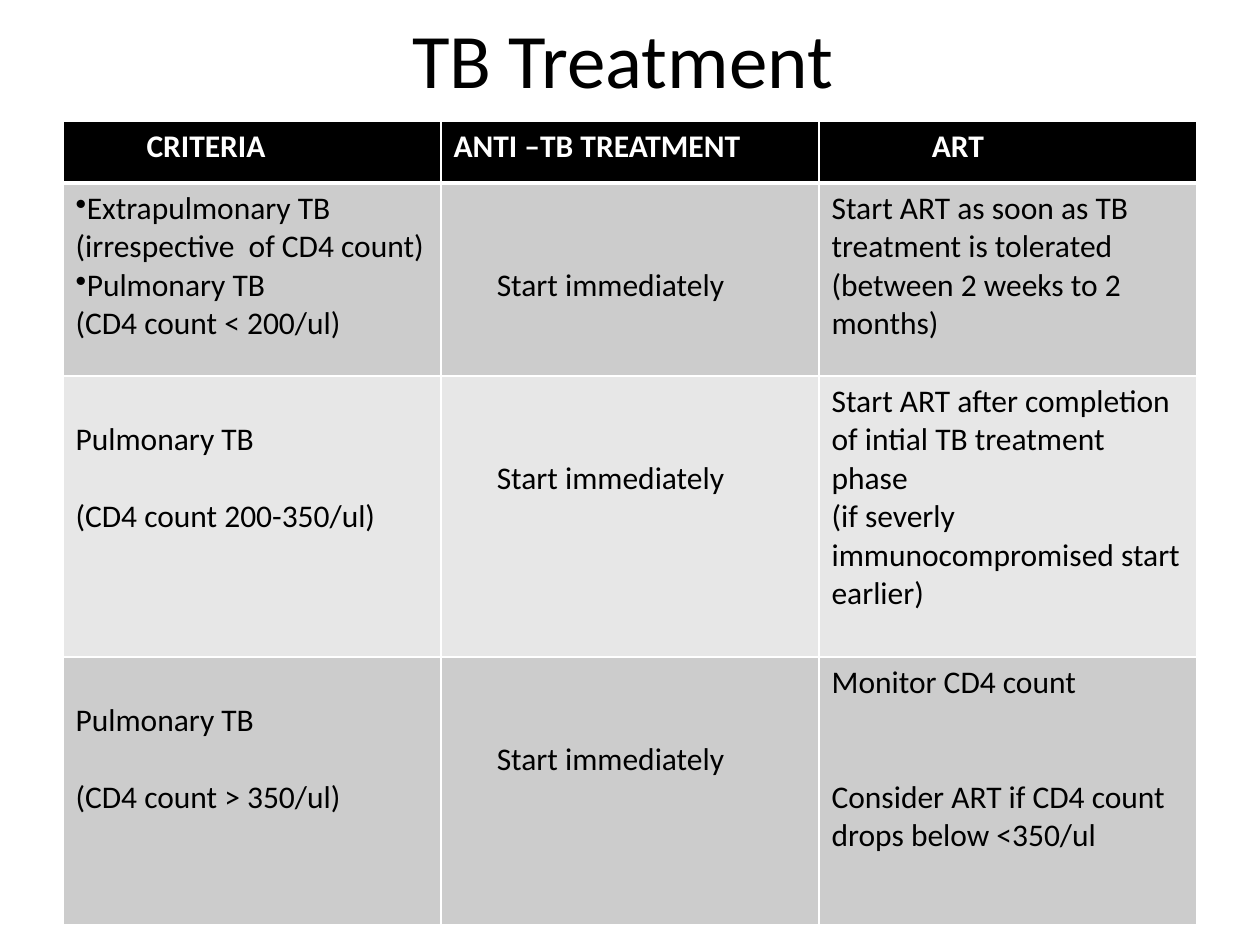
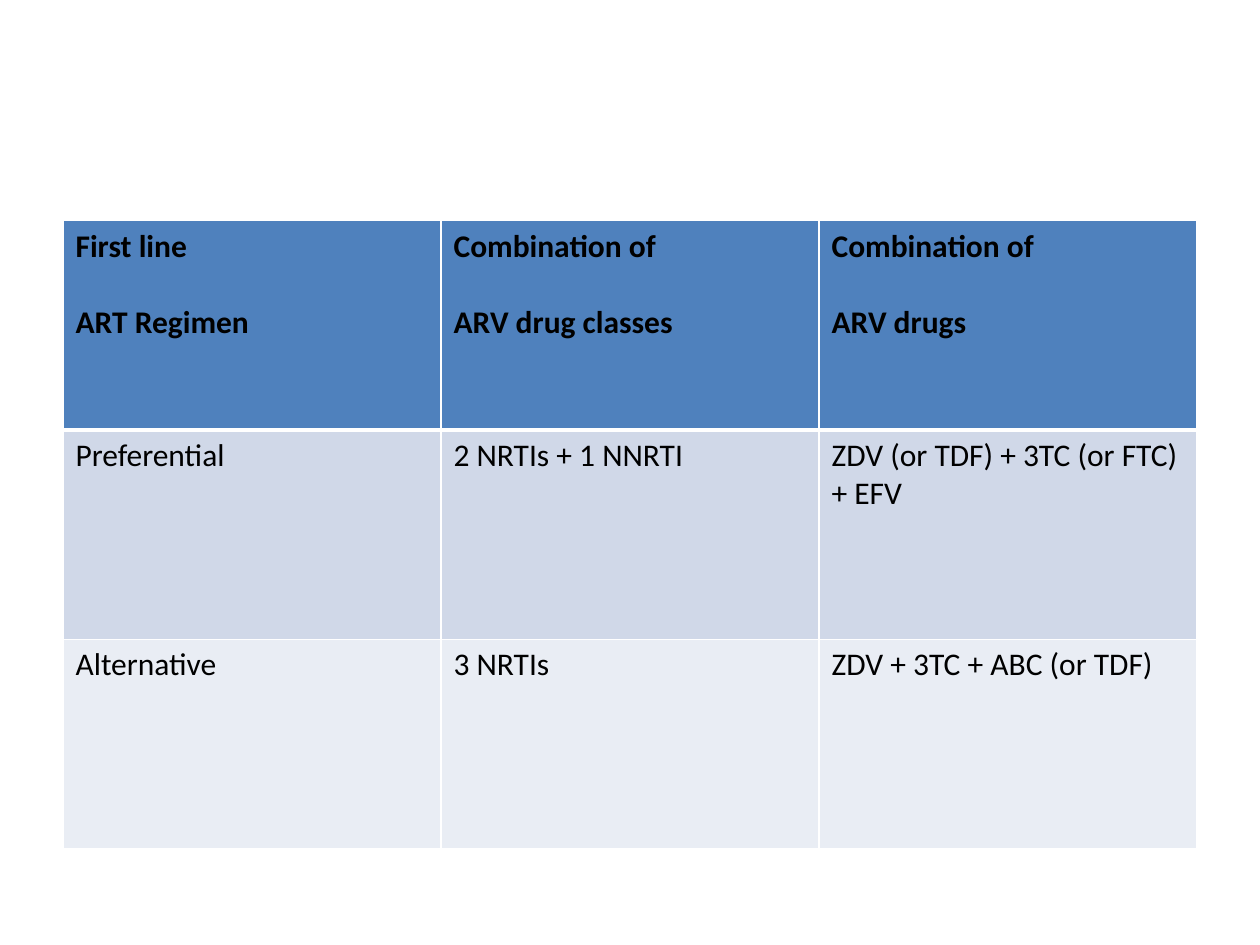
"""Build two slides with tables on tuberculosis treatment and first line ART regimens."""
import dataclasses

import lxml.etree
import pptx
import pptx.dml.color
import pptx.enum.text
import pptx.oxml.ns
import pptx.util

Cm = pptx.util.Cm
Pt = pptx.util.Pt


@dataclasses.dataclass(frozen=True)
class Theme:
    """Colours, font and type sizes shared by the slides."""
    font: str = "Calibri"
    title_size: int = 44
    cell_size: int = 18
    line_height: int = 22
    ink: str = "000000"
    paper: str = "FFFFFF"
    grey_bands: tuple = ("CCCCCC", "E7E7E7")
    blue: str = "4F81BD"
    blue_bands: tuple = ("D0D8E8", "E9EDF4")
    rule: int = 1
    header_rule: int = 3


@dataclasses.dataclass(frozen=True)
class Line:
    """One paragraph: its text, empty lines above, left indent in cm and bullet."""
    text: str
    gap: int = 0
    indent: float = 0
    bullet: bool = False


THEME = Theme()
START = [Line("Start immediately", gap=2, indent=0.87)]

TREATMENT = {
    "title": "TB Treatment ",
    "top": 2.45,
    "row_heights": (1.24, 3.89, 5.66, 5.41),
    "header_fill": THEME.ink,
    "header_ink": THEME.paper,
    "bands": THEME.grey_bands,
    "rows": [
        [[Line("CRITERIA", indent=1.43)],
         [Line("ANTI –TB TREATMENT")],
         [Line("ART", indent=2.02)]],
        [[Line("Extrapulmonary TB", bullet=True),
          Line("(irrespective  of CD4 count)"),
          Line("Pulmonary TB", bullet=True),
          Line("(CD4 count < 200/ul)")],
         START,
         [Line("Start ART as soon as TB treatment is tolerated"),
          Line("(between 2 weeks to 2 months)")]],
        [[Line("Pulmonary TB", gap=1), Line("(CD4 count 200-350/ul)", gap=1)],
         START,
         [Line("Start ART after completion of intial TB treatment phase"),
          Line("(if severly immunocompromised start earlier)")]],
        [[Line("Pulmonary TB", gap=1), Line("(CD4 count > 350/ul)", gap=1)],
         START,
         [Line("Monitor CD4 count"),
          Line("Consider ART if CD4 count drops below <350/ul", gap=2)]],
    ],
}

REGIMENS = {
    "title": None,
    "top": 4.45,
    "row_heights": (4.22,) * 3,
    "header_fill": THEME.blue,
    "header_ink": THEME.ink,
    "bands": THEME.blue_bands,
    "rows": [
        [[Line("First line"), Line("ART Regimen", gap=1)],
         [Line("Combination of"), Line("ARV drug classes", gap=1)],
         [Line("Combination of"), Line("ARV drugs", gap=1)]],
        [[Line("Preferential")],
         [Line("2 NRTIs + 1 NNRTI")],
         [Line("ZDV (or TDF) + 3TC (or FTC) + EFV")]],
        [[Line("Alternative")],
         [Line("3 NRTIs")],
         [Line("ZDV + 3TC + ABC (or TDF)")]],
    ],
}

TABLE_LEFT = 1.27
COLUMN_WIDTH = 7.62
CELL_INSET = 3.6


def rgb(colour):
    """Turn a hex string into a colour value."""
    return pptx.dml.color.RGBColor.from_string(colour)


def add_run(paragraph, text, size, colour, bold=False):
    """Add one formatted run to a paragraph."""
    run = paragraph.add_run()
    run.text = text
    run.font.name = THEME.font
    run.font.size = Pt(size)
    run.font.bold = bold
    run.font.color.rgb = rgb(colour)


def set_borders(cell, top, bottom):
    """Draw the four rules of a cell, with their widths in points."""
    qn = pptx.oxml.ns.qn
    properties = cell._tc.get_or_add_tcPr()
    widths = {"a:lnL": THEME.rule, "a:lnR": THEME.rule, "a:lnT": top, "a:lnB": bottom}
    for position, (side, width) in enumerate(widths.items()):
        border = lxml.etree.Element(qn(side), w=str(Pt(width)))
        fill = lxml.etree.SubElement(border, qn("a:solidFill"))
        lxml.etree.SubElement(fill, qn("a:srgbClr"), val=THEME.paper)
        properties.insert(position, border)


def write_cell(cell, lines, colour, bold):
    """Write the paragraphs of a cell, with their gaps, indents and bullets."""
    frame = cell.text_frame
    cell.margin_top = Pt(CELL_INSET + lines[0].gap * THEME.line_height)
    for number, line in enumerate(lines):
        paragraph = frame.add_paragraph() if number else frame.paragraphs[0]
        if number and line.gap:
            paragraph.space_before = Pt(line.gap * THEME.line_height)
        properties = paragraph._p.get_or_add_pPr()
        properties.set("marL", str(Cm(line.indent)))
        properties.set("indent", "0")
        if line.bullet:
            lxml.etree.SubElement(properties, pptx.oxml.ns.qn("a:buChar"), char="•")
        add_run(paragraph, line.text, THEME.cell_size, colour, bold)


def add_title(slide, text):
    """Place and fill the title."""
    title = slide.shapes.title
    title.left, title.top, title.width, title.height = Cm(1.3), Cm(0), Cm(22.86), Cm(2.34)
    title.text_frame.vertical_anchor = pptx.enum.text.MSO_ANCHOR.MIDDLE
    paragraph = title.text_frame.paragraphs[0]
    paragraph.alignment = pptx.enum.text.PP_ALIGN.CENTER
    add_run(paragraph, text, THEME.title_size, THEME.ink)


def add_grid(slide, content):
    """Add the table with its header and alternating bands."""
    rows, heights = content["rows"], content["row_heights"]
    columns = len(rows[0])
    table = slide.shapes.add_table(
        len(rows), columns, Cm(TABLE_LEFT), Cm(content["top"]),
        Cm(COLUMN_WIDTH * columns), Cm(sum(heights))).table
    for column in table.columns:
        column.width = Cm(COLUMN_WIDTH)
    for r, (row, height) in enumerate(zip(rows, heights)):
        table.rows[r].height = Cm(height)
        header = r == 0
        fill = content["header_fill"] if header else content["bands"][(r - 1) % 2]
        ink = content["header_ink"] if header else THEME.ink
        for c, lines in enumerate(row):
            cell = table.cell(r, c)
            cell.fill.solid()
            cell.fill.fore_color.rgb = rgb(fill)
            set_borders(cell, THEME.header_rule if r == 1 else THEME.rule,
                        THEME.header_rule if header else THEME.rule)
            write_cell(cell, lines, ink, header)


def main():
    """Build and save the presentation."""
    deck = pptx.Presentation()
    deck.slide_width, deck.slide_height = Cm(25.4), Cm(19.05)
    title_only, blank = deck.slide_layouts[5], deck.slide_layouts[6]
    for content in (TREATMENT, REGIMENS):
        slide = deck.slides.add_slide(title_only if content["title"] else blank)
        if content["title"]:
            add_title(slide, content["title"])
        add_grid(slide, content)
    deck.save("out.pptx")


if __name__ == "__main__":
    main()
